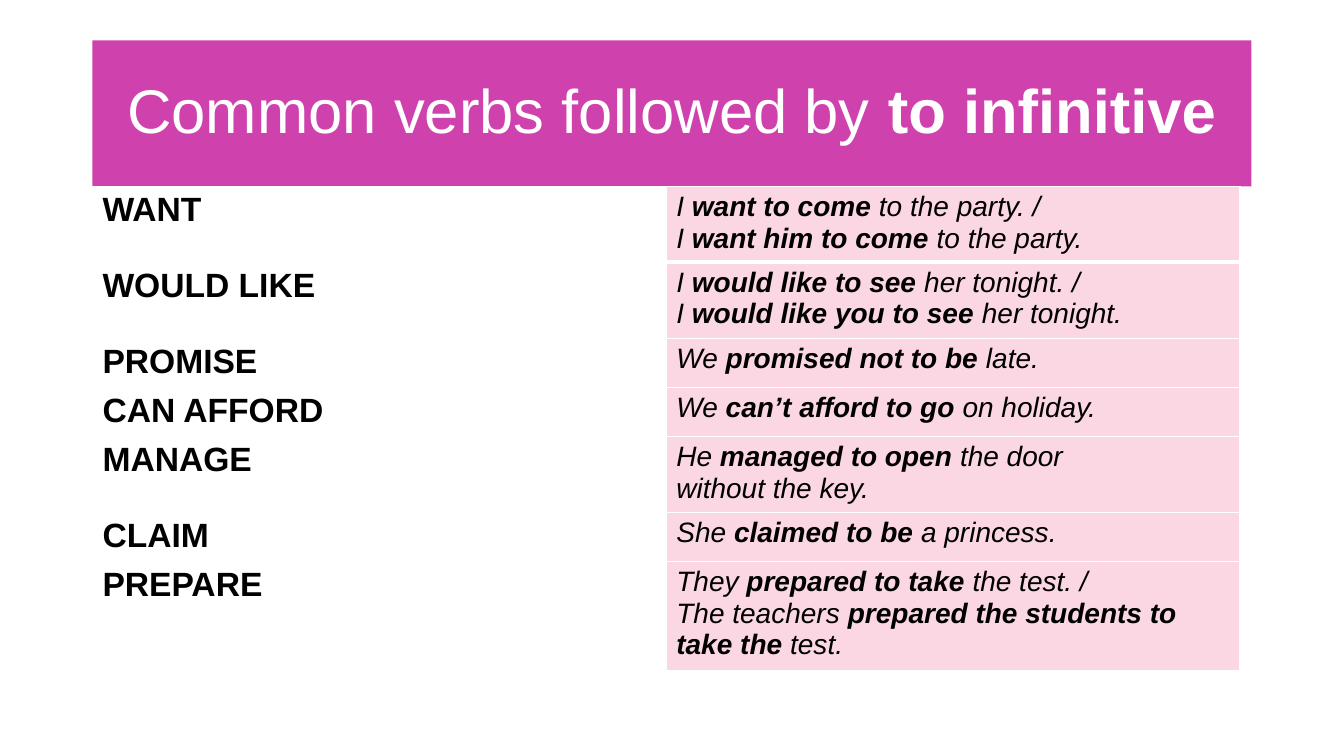
"""Build a slide that lists common verbs followed by the to infinitive."""
from lxml.etree import SubElement
from pptx import Presentation
from pptx.dml.color import RGBColor
from pptx.enum.shapes import MSO_SHAPE as Shape
from pptx.enum.text import MSO_ANCHOR as Anchor, PP_ALIGN as Align
from pptx.oxml.ns import qn
from pptx.util import Cm, Pt

TITLE = "Common verbs followed by *to infinitive*"
VERBS = [
    ("WANT", ["I *want to come *to the party. /", "I *want him to come *to the party."]),
    ("WOULD LIKE", ["I *would like to see *her tonight. /",
                    "I *would like you to see *her tonight."]),
    ("PROMISE", ["We *promised not to be *late."]),
    ("CAN AFFORD", ["We *can’t afford to go *on holiday."]),
    ("MANAGE", ["He *managed to open *the door", "without the key."]),
    ("CLAIM", ["She *claimed to be *a princess."]),
    ("PREPARE", ["They *prepared to take *the test. /",
                 "The teachers *prepared the students to take the *test."]),
]
ROW_HEIGHTS = [1.91, 1.91, 1.24, 1.24, 1.91, 1.24, 2.74]
LEFT, TOP, TITLE_WIDTH, TITLE_HEIGHT = 2.33, 1.02, 29.21, 3.68
COLUMN_WIDTH = 14.46
WHITE, BLACK, MAGENTA, PINK = "FFFFFF", "000000", "CF41AD", "FAD7E3"
TITLE_FONT = {"name": "Arial", "size": Pt(44)}
VERB_FONT = {"name": "Arial", "size": Pt(24)}
EXAMPLE_FONT = {"name": "Arial", "size": Pt(20), "italic": True}


def paint(fill, color):
    fill.solid()
    fill.fore_color.rgb = RGBColor.from_string(color)


def write(frame, lines, font, color):
    """Write lines whose parts between asterisks are bold."""
    for number, line in enumerate(lines):
        para = frame.add_paragraph() if number else frame.paragraphs[0]
        for index, part in enumerate(line.split("*")):
            if part:
                span = para.add_run()
                span.text = part
                for name, value in font.items():
                    setattr(span.font, name, value)
                span.font.bold = index % 2 == 1
                paint(span.font.fill, color)


def add_borders(cell, widths):
    properties = cell._tc.get_or_add_tcPr()
    for side, width in widths.items():
        line = SubElement(properties, qn("a:ln" + side), w=str(Pt(width)))
        SubElement(SubElement(line, qn("a:solidFill")), qn("a:srgbClr"), val=WHITE)


def add_title(page):
    box = page.shapes.add_shape(
        Shape.RECTANGLE, Cm(LEFT), Cm(TOP), Cm(TITLE_WIDTH), Cm(TITLE_HEIGHT))
    box.shadow.inherit = False
    paint(box.fill, MAGENTA)
    box.line.fill.background()
    frame = box.text_frame
    frame.word_wrap = True
    frame.vertical_anchor = Anchor.MIDDLE
    write(frame, [TITLE], TITLE_FONT, WHITE)
    frame.paragraphs[0].alignment = Align.CENTER
    frame.paragraphs[0].line_spacing = 0.9


def add_verbs(page):
    table = page.shapes.add_table(
        len(VERBS), 2, Cm(LEFT), Cm(TOP + TITLE_HEIGHT),
        Cm(2 * COLUMN_WIDTH), Cm(sum(ROW_HEIGHTS))).table
    table.first_row = table.horz_banding = False
    for column in table.columns:
        column.width = Cm(COLUMN_WIDTH)
    for row, (verb, examples) in enumerate(VERBS):
        table.rows[row].height = Cm(ROW_HEIGHTS[row])
        contents = [([f"*{verb}*"], VERB_FONT, WHITE), (examples, EXAMPLE_FONT, PINK)]
        for column, (lines, font, color) in enumerate(contents):
            cell = table.cell(row, column)
            add_borders(cell, {"L": 1, "R": 1, "T": 3 if row == 1 else 1,
                               "B": 3 if row == 0 else 1})
            paint(cell.fill, color)
            write(cell.text_frame, lines, font, BLACK)


def main():
    deck = Presentation()
    deck.slide_width, deck.slide_height = Cm(33.87), Cm(19.05)
    page = deck.slides.add_slide(deck.slide_layouts[6])
    add_title(page)
    add_verbs(page)
    deck.save("out.pptx")


if __name__ == "__main__":
    main()
